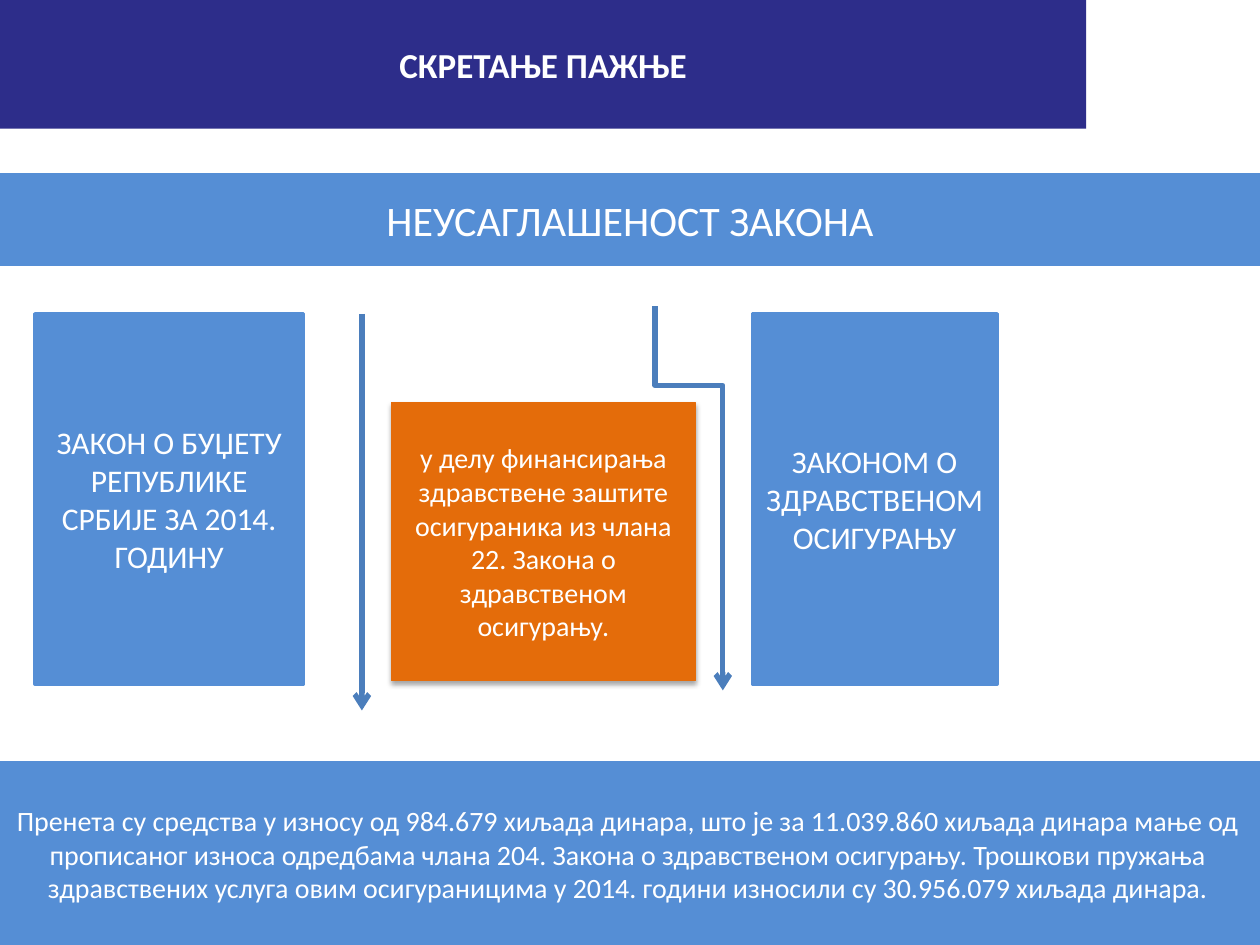
import pptx
import pptx.util
import pptx.dml.color
import pptx.enum.shapes
import pptx.enum.text
import pptx.oxml
import pptx.oxml.ns

Pt = pptx.util.Pt
SHAPE = pptx.enum.shapes.MSO_SHAPE
CONNECTOR = pptx.enum.shapes.MSO_CONNECTOR
WIDTH, HEIGHT = 720, 540
NAVY, BLUE, STEEL, ORANGE, WHITE = "2D2D8A", "558ED5", "4B7EBC", "E46C0A", "FFFFFF"


def rgb(value):
    return pptx.dml.color.RGBColor.from_string(value)


def add_xml(parent, xml):
    """Append a DrawingML fragment to parent."""
    tag, rest = xml[:xml.index(">")], xml[xml.index(">"):]
    slash = "/" if tag.endswith("/") else ""
    tag = tag.rstrip("/") + " " + pptx.oxml.ns.nsdecls("a") + slash
    parent.append(pptx.oxml.parse_xml(tag + rest))


class Slide:
    def __init__(self, prs, font="Calibri", colour=WHITE):
        self.s = prs.slides.add_slide(prs.slide_layouts[6])
        self.font, self.colour = font, colour

    def box(self, text, at, size, fill=BLUE, line=2, kind=SHAPE.RECTANGLE,
            wrap=True, bold=False):
        """Filled shape with centred text; line is a width, or 0 for no outline."""
        sp = self.s.shapes.add_shape(kind, *map(Pt, at))
        sp.shadow.inherit = False
        sp.fill.solid()
        sp.fill.fore_color.rgb = rgb(fill)
        if line:
            sp.line.color.rgb = rgb(fill)
            sp.line.width = Pt(line)
        else:
            sp.line.fill.background()
        tf = sp.text_frame
        tf.word_wrap = wrap
        tf.vertical_anchor = pptx.enum.text.MSO_ANCHOR.MIDDLE
        p = tf.paragraphs[0]
        p.alignment = pptx.enum.text.PP_ALIGN.CENTER
        r = p.add_run()
        r.text = text
        for name, value in {"name": self.font, "size": Pt(size), "bold": bold}.items():
            setattr(r.font, name, value)
        r.font.color.rgb = rgb(self.colour)
        return sp

    def drop_shadow(self, sp, blur=3.1, distance=1.8, opacity=35):
        """Soft black shadow straight below the shape."""
        effects = sp._element.spPr.find(pptx.oxml.ns.qn("a:effectLst"))
        add_xml(effects, f'<a:outerShdw blurRad="{Pt(blur)}" dist="{Pt(distance)}" '
                         'dir="5400000" rotWithShape="0"><a:srgbClr val="000000">'
                         f'<a:alpha val="{opacity * 1000}"/></a:srgbClr></a:outerShdw>')

    def arrow(self, start, end, kind=CONNECTOR.STRAIGHT):
        cn = self.s.shapes.add_connector(kind, *map(Pt, start + end))
        cn.line.color.rgb = rgb(STEEL)
        cn.line.width = Pt(3)
        add_xml(cn.line._get_or_add_ln(), '<a:tailEnd type="arrow"/>')
        add_xml(cn._element.spPr, "<a:effectLst/>")
        return cn

    def down_elbow(self, start, end, bend):
        """Arrow going down, across and down; bend is the share of the first drop."""
        (x1, y1), (x2, y2) = start, end
        cx, cy = (x1 + x2) / 2, (y1 + y2) / 2
        half_w, half_h = (y2 - y1) / 2, (x2 - x1) / 2
        cn = self.arrow((cx + half_w, cy - half_h), (cx - half_w, cy + half_h),
                        CONNECTOR.ELBOW)
        spPr = cn._element.spPr
        spPr.xfrm.set("rot", str(270 * 60000))
        guides = spPr.prstGeom.get_or_add_avLst()
        add_xml(guides, f'<a:gd name="adj1" fmla="val {round(bend * 100000)}"/>')


def main():
    prs = pptx.Presentation()
    prs.slide_width, prs.slide_height = Pt(WIDTH), Pt(HEIGHT)
    slide = Slide(prs)

    slide.box("СКРЕТАЊЕ ПАЖЊЕ", (0, 0, 620.7, 73.5), 20, NAVY, line=0, wrap=False, bold=True)
    slide.box("НЕУСАГЛАШЕНОСТ ЗАКОНА", (0, 100, WIDTH, 51), 24)

    law_top, law_height = 179.3, 211.7
    for text, left, width in (
        ("ЗАКОН О БУЏЕТУ РЕПУБЛИКЕ СРБИЈЕ ЗА 2014. ГОДИНУ", 20, 153.4),
        ("ЗАКОНОМ О ЗДРАВСТВЕНОМ ОСИГУРАЊУ", 430, 139.7),
    ):
        slide.box(text, (left, law_top, width, law_height), 18,
                  kind=SHAPE.FLOWCHART_PROCESS)

    slide.arrow((206.8, law_top), (206.8, 406))
    slide.down_elbow((374.3, 175), (413, 394.5), 0.206)

    conflict = slide.box(
        "у делу финансирања здравствене заштите осигураника из члана 22. "
        "Закона о здравственом осигурању.",
        (223.7, 230, 173.7, 159), 16, ORANGE, line=0.75)
    slide.drop_shadow(conflict)

    slide.box(
        "Пренета су средства у износу од 984.679 хиљада динара, што је за "
        "11.039.860 хиљада динара мање од прописаног износа одредбама члана 204. "
        "Закона о здравственом осигурању. Трошкови пружања здравствених услуга "
        "овим осигураницима у 2014. години износили су 30.956.079 хиљада динара.",
        (-2.3, 436, WIDTH + 2.3, HEIGHT - 436), 16)

    prs.save("out.pptx")


if __name__ == "__main__":
    main()
